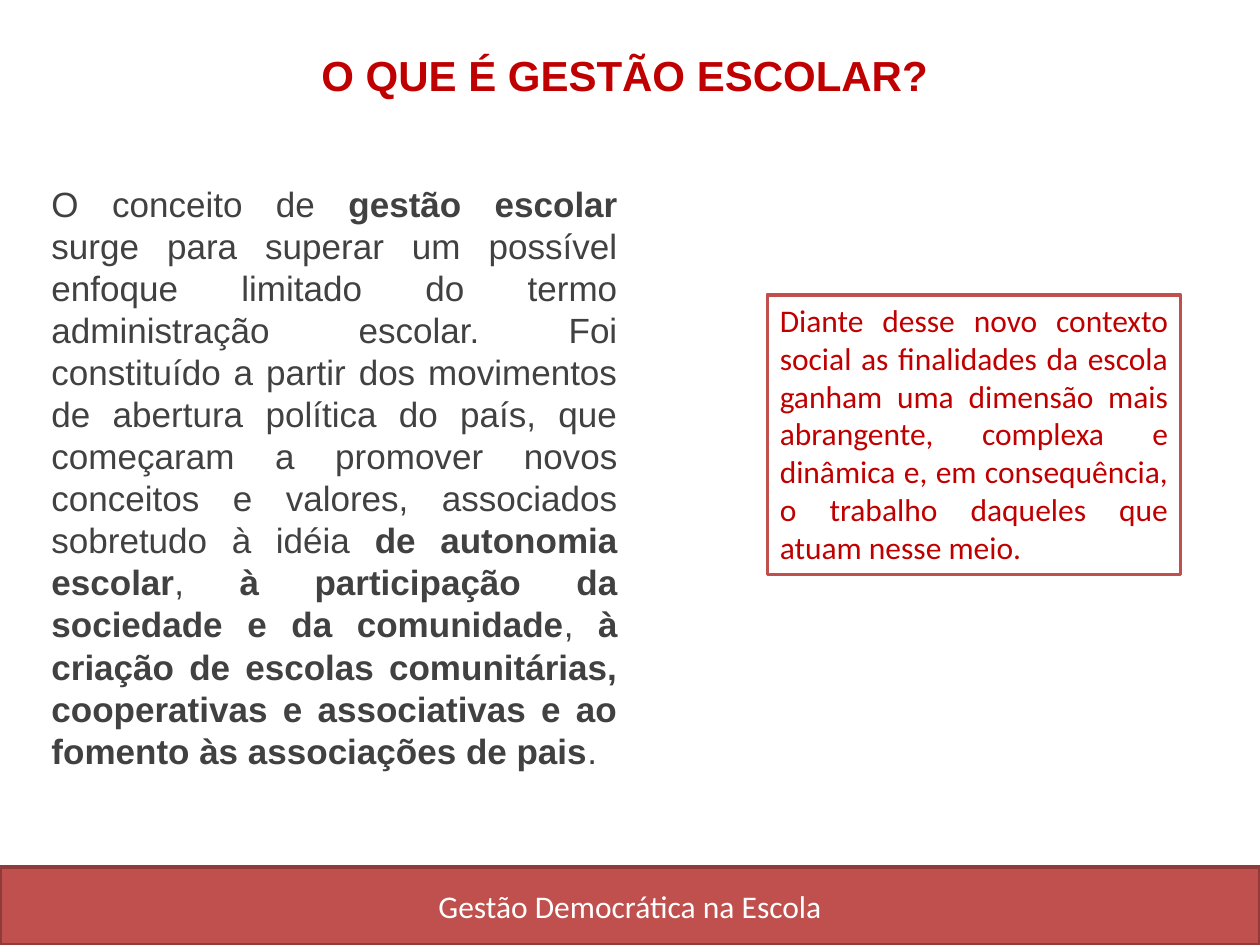
from pptx import Presentation
from pptx.dml.color import RGBColor
from pptx.enum.shapes import MSO_SHAPE as Shape
from pptx.enum.text import MSO_ANCHOR as Anchor, PP_ALIGN as Align
from pptx.util import Inches, Pt

RED = RGBColor(0xC0, 0x50, 0x4D)
EDGE = RGBColor(0x8E, 0x3B, 0x39)
DEEP = RGBColor(0xC0, 0x00, 0x00)
GREY = RGBColor(0x41, 0x41, 0x41)
WHITE = RGBColor(0xFF, 0xFF, 0xFF)

TITLE = [("O QUE É GESTÃO ESCOLAR? ", True)]
BODY = [
    ("O conceito de ", False),
    ("gestão escolar ", True),
    ("surge para superar um possível enfoque limitado do termo "
     "administração escolar. Foi constituído a partir dos movimentos de "
     "abertura política do país, que começaram a promover novos conceitos "
     "e valores, associados sobretudo à idéia ", False),
    ("de autonomia escolar", True),
    (", ", False),
    ("à participação da sociedade e da comunidade", True),
    (", ", False),
    ("à criação de escolas comunitárias, cooperativas e associativas e ao "
     "fomento às associações de pais", True),
    (".", False),
]
NOTE = [("Diante desse novo contexto social as finalidades da escola ganham "
         "uma dimensão mais abrangente, complexa e dinâmica e, em "
         "consequência, o trabalho daqueles que atuam nesse meio.", False)]
FOOTER = [("Gestão Democrática na Escola", False)]


def write(shape, runs, face, size, color, align, anchor=Anchor.TOP):
    frame = shape.text_frame
    frame.word_wrap = True
    frame.vertical_anchor = anchor
    para = frame.paragraphs[0]
    para.alignment = align
    font = para.font
    font.name, font.size = face, Pt(size)
    font.color.rgb = color
    for text, bold in runs:
        run = para.add_run()
        run.text = text
        run.font.bold = bold


def add_text(slide, box):
    return slide.shapes.add_textbox(*map(Inches, box))


def add_rect(slide, box, fill, line):
    rect = slide.shapes.add_shape(Shape.RECTANGLE, *map(Inches, box))
    rect.shadow.inherit = False
    rect.fill.solid()
    rect.fill.fore_color.rgb = fill
    rect.line.color.rgb = line
    rect.line.width = Pt(2)
    return rect


def main():
    deck = Presentation()
    deck.slide_width, deck.slide_height = Inches(10), Inches(7.5)
    slide = deck.slides.add_slide(deck.slide_layouts[6])

    footer = add_rect(slide, (0, 6.88, 10, 0.62), RED, EDGE)
    write(footer, FOOTER, "Calibri", 18, WHITE, Align.CENTER, Anchor.MIDDLE)
    body = add_text(slide, (0.31, 1.38, 4.69, 4.81))
    write(body, BODY, "Arial", 20, GREY, Align.JUSTIFY, Anchor.MIDDLE)
    title = add_text(slide, (2.27, 0.34, 5.47, 0.5))
    write(title, TITLE, "Arial", 24, DEEP, Align.CENTER)
    note = add_rect(slide, (6.09, 2.34, 3.28, 2.22), WHITE, RED)
    write(note, NOTE, "Calibri", 18, DEEP, Align.JUSTIFY)

    deck.save("out.pptx")


if __name__ == "__main__":
    main()
